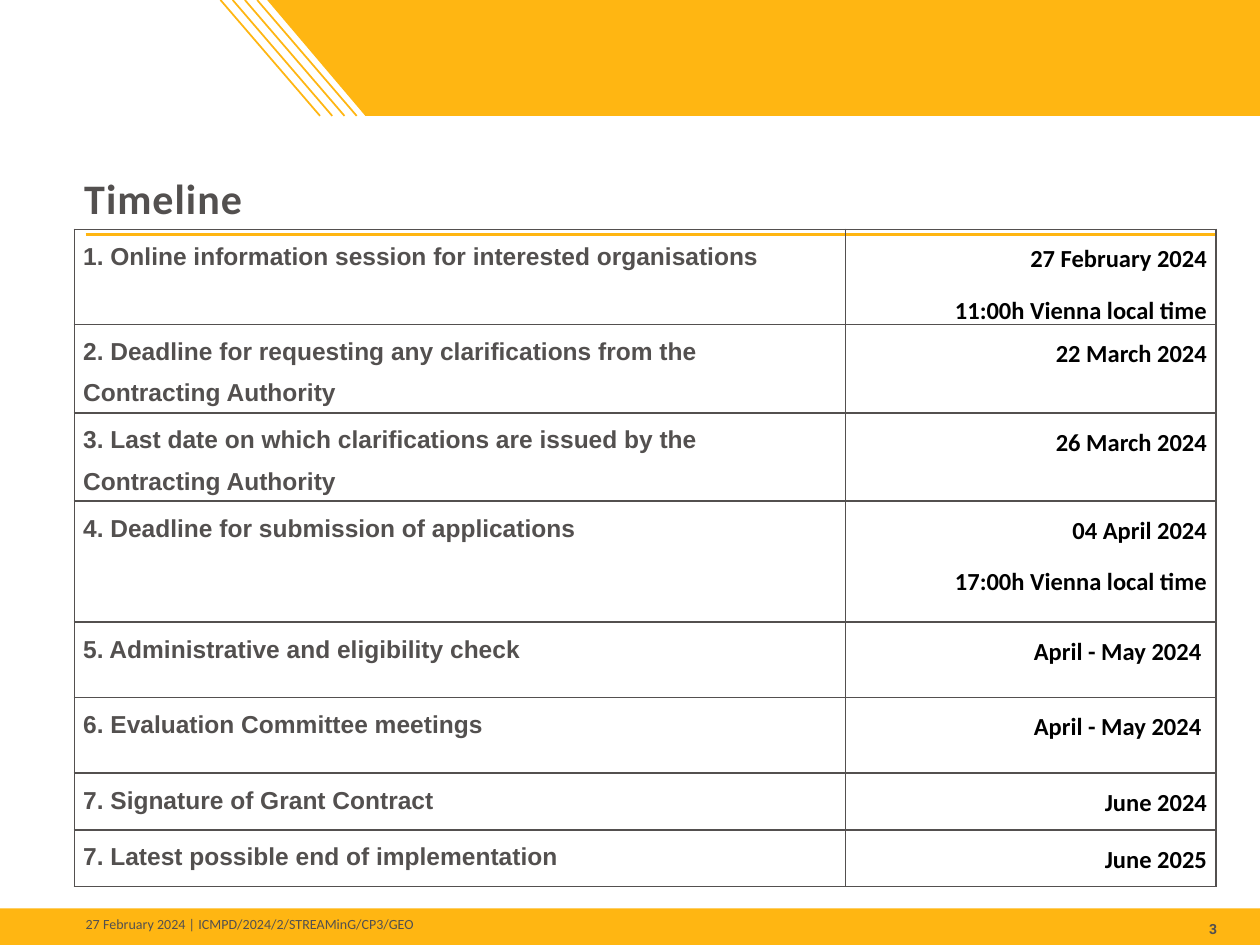
from dataclasses import dataclass
from lxml import etree
from pptx import Presentation
from pptx import util as u
from pptx.dml.color import RGBColor
from pptx.enum import shapes, text
from pptx.oxml import ns


@dataclass(frozen=True)
class Theme:
    accent: RGBColor = RGBColor.from_string("FFB612")
    grey: RGBColor = RGBColor.from_string("53504F")
    black: RGBColor = RGBColor.from_string("000000")
    heading: str = "Calibri"
    label: str = "Arial"
    number: str = "Roboto"
    title_size: int = 24
    table_size: int = 14
    footer_size: int = 8


@dataclass(frozen=True)
class Step:
    label: str
    dates: tuple[str, ...]
    height: float


@dataclass(frozen=True)
class Rule:
    start: tuple[float, float]
    end: tuple[float, float]
    width: float


THEME = Theme()
STRIPES = [Rule((1.75 + i * 0.097, 0), (2.54 + i * 0.097, 0.92), 1) for i in range(4)]
RULES = [Rule((0.68, 1.86), (9.66, 1.86), 1.5), *STRIPES]
STEPS = [
    Step("1. Online information session for interested organisations",
         ("27 February 2024", "11:00h Vienna local time"), 0.7),
    Step("2. Deadline for requesting any clarifications from the Contracting Authority",
         ("22 March 2024",), 0.65),
    Step("3. Last date on which clarifications are issued by the Contracting Authority",
         ("26 March 2024",), 0.65),
    Step("4. Deadline for submission of applications",
         ("04 April 2024", "17:00h Vienna local time"), 0.96),
    Step("5. Administrative and eligibility check", ("April - May 2024 ",), 0.6),
    Step("6. Evaluation Committee meetings", ("April - May 2024 ",), 0.6),
    Step("7. Signature of Grant Contract", ("June 2024",), 0.45),
    Step("7. Latest possible end of implementation", ("June 2025",), 0.45),
]


def paint(shape) -> None:
    shape.fill.solid()
    shape.fill.fore_color.rgb = THEME.accent
    shape.line.fill.background()
    shape.shadow.inherit = False


def add_span(para, words: str, font: str, size: int, color: RGBColor, bold: bool = True):
    span = para.add_run()
    span.text = words
    span.font.name = font
    span.font.size = u.Pt(size)
    span.font.bold = bold
    span.font.color.rgb = color
    return span


def add_box(page, left: float, top: float, width: float, height: float,
            anchor=text.MSO_ANCHOR.MIDDLE, inset: float = 0, wrap: bool = True):
    box = page.shapes.add_textbox(*map(u.Inches, (left, top, width, height)))
    frame = box.text_frame
    frame.word_wrap = wrap
    frame.vertical_anchor = anchor
    frame.margin_left = frame.margin_right = u.Inches(inset)
    frame.margin_top = frame.margin_bottom = u.Inches(inset / 2)
    return frame.paragraphs[0]


def add_rule(page, rule: Rule) -> None:
    line = page.shapes.add_connector(
        shapes.MSO_CONNECTOR.STRAIGHT, *map(u.Inches, rule.start + rule.end))
    line.line.color.rgb = THEME.accent
    line.line.width = u.Pt(rule.width)
    etree.SubElement(line._element.spPr, ns.qn("a:effectLst"))


def add_borders(cell) -> None:
    properties = cell._tc.get_or_add_tcPr()
    for index, side in enumerate(("lnL", "lnR", "lnT", "lnB")):
        edge = etree.Element(ns.qn(f"a:{side}"), w=str(u.Pt(1)))
        fill = etree.SubElement(edge, ns.qn("a:solidFill"))
        etree.SubElement(fill, ns.qn("a:srgbClr"), val=str(THEME.grey))
        properties.insert(index, edge)


def fill_cell(cell, lines: tuple[str, ...], font: str, color: RGBColor, align) -> None:
    cell.fill.background()
    cell.margin_left = cell.margin_right = u.Inches(0.07)
    cell.margin_top = cell.margin_bottom = 0
    add_borders(cell)
    for index, words in enumerate(lines):
        para = cell.text_frame.add_paragraph() if index else cell.text_frame.paragraphs[0]
        para.alignment = align
        para.line_spacing = 1.5
        if index:
            para.space_before = u.Pt(4)
        add_span(para, words, font, THEME.table_size, color)


def add_timeline(page) -> None:
    height = sum(step.height for step in STEPS)
    frame = page.shapes.add_table(
        len(STEPS), 2, *map(u.Inches, (0.59, 1.82, 9.06, height)))
    table = frame.table
    table.first_row = table.horz_banding = False
    for column, width in zip(table.columns, (6.12, 2.94)):
        column.width = u.Inches(width)
    for row, step in zip(table.rows, STEPS):
        row.height = u.Inches(step.height)
        fill_cell(row.cells[0], (step.label,), THEME.label, THEME.grey, text.PP_ALIGN.LEFT)
        fill_cell(row.cells[1], step.dates, THEME.heading, THEME.black, text.PP_ALIGN.RIGHT)


def add_frame(page) -> None:
    outline = page.shapes.build_freeform(u.Inches(2.12), 0)
    corners = ((10, 0), (10, 0.92), (2.9, 0.92))
    outline.add_line_segments([(u.Inches(x), u.Inches(y)) for x, y in corners])
    paint(outline.convert_to_shape())
    paint(page.shapes.add_shape(
        shapes.MSO_SHAPE.RECTANGLE, *map(u.Inches, (0, 7.21, 10, 0.31))))
    for rule in RULES:
        add_rule(page, rule)
    number = add_box(page, 9, 7.31, 0.66, 0.13)
    number.alignment = text.PP_ALIGN.RIGHT
    add_span(number, "3", THEME.number, THEME.footer_size, THEME.grey)
    footer = add_box(page, 0.68, 7.23, 4.32, 0.21, wrap=False)
    add_span(footer, "27 February 2024 | ICMPD/2024/2/STREAMinG/CP3/GEO",
             THEME.heading, THEME.footer_size, THEME.grey, bold=False)


def main() -> None:
    deck = Presentation()
    deck.slide_width, deck.slide_height = u.Inches(10), u.Inches(7.5)
    page = deck.slides.add_slide(deck.slide_layouts[6])
    add_frame(page)
    title = add_box(page, 0.57, 0.99, 9.15, 0.83, text.MSO_ANCHOR.BOTTOM, 0.1)
    span = add_span(title, "Timeline", THEME.heading, THEME.title_size, THEME.grey)
    span.font._element.set("spc", "60")
    add_timeline(page)
    deck.save("out.pptx")


if __name__ == "__main__":
    main()
